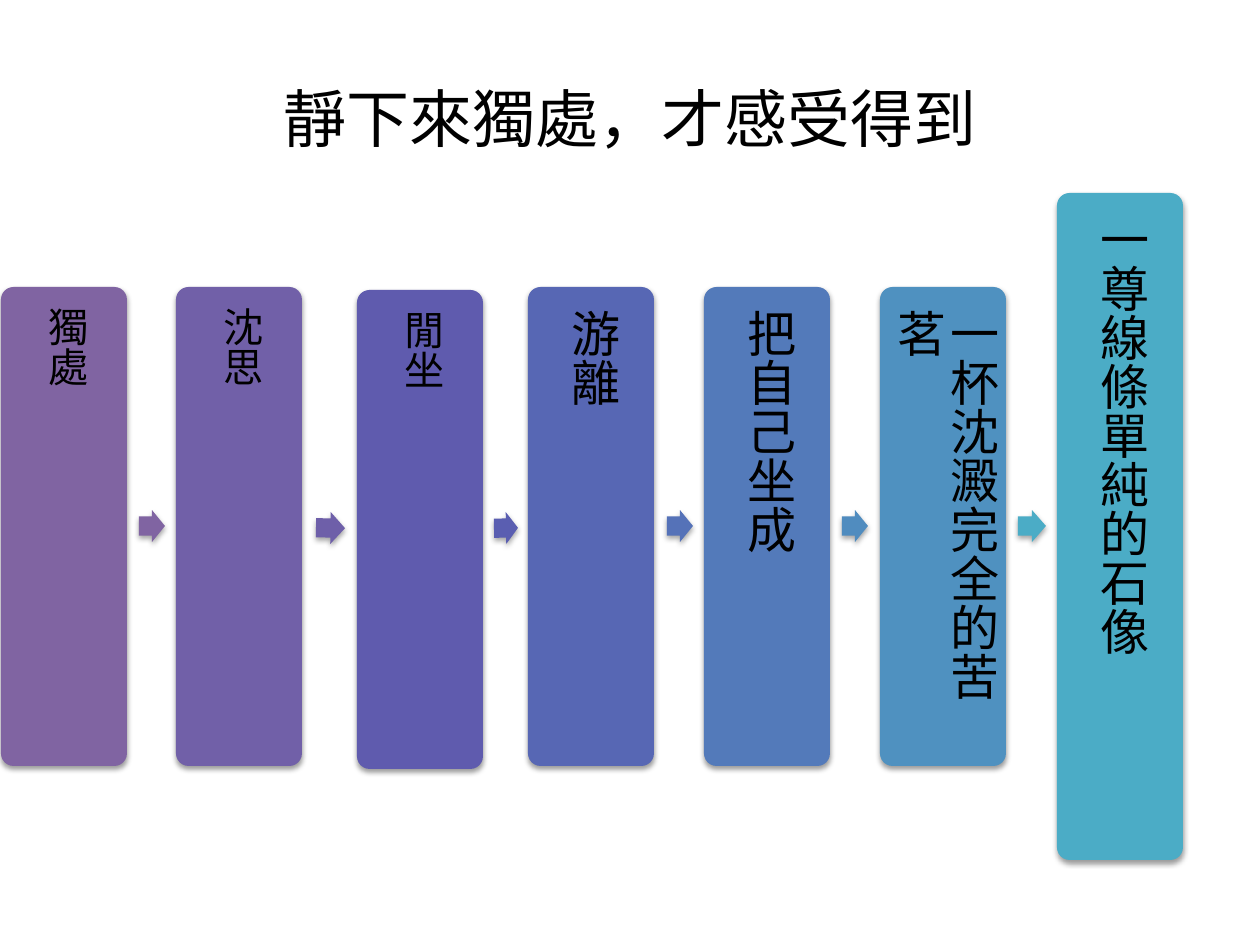
"""Build a slide showing a row of vertical cards joined by arrows."""
import pptx
import pptx.util
import pptx.dml.color
import pptx.enum.shapes
import pptx.enum.text
import pptx.oxml
import pptx.oxml.ns

SHAPE = pptx.enum.shapes.MSO_SHAPE
ALIGN = pptx.enum.text.PP_ALIGN
MIDDLE = pptx.enum.text.MSO_ANCHOR.MIDDLE
WIDE, TALL, HEAD = 126, 479, 32
CARDS = [
    ("獨處", 1, 287, TALL, 23, "8064A2"),
    ("沈思", 176, 287, TALL, 23, "7160A8"),
    ("閒坐", 357, 290, TALL, 23, "5F5BAE"),
    ("游離", 528, 287, TALL, 28, "5767B4"),
    ("把自己坐成", 704, 287, TALL, 28, "537ABA"),
    ("一杯沈澱完全的苦茗", 880, 287, TALL, 28, "4F91C0"),
    ("一尊線條單純的石像", 1057, 193, 667, 28, "4BACC6"),
]
ARROWS = [
    (139, 510, 26, 0, "8064A2"),
    (316, 512, 29, 0.9, "6E5FA9"),
    (494, 512, 24, 359, "5A5EB1"),
    (667, 510, 26, 0, "5572B8"),
    (842, 510, 26, 0, "508CBF"),
    (1018, 510, 28, 0, "4BACC6"),
]


def px(count):
    """Turn pixels into EMU."""
    return pptx.util.Emu(round(count * 914400 / 126))


def tint(code):
    """Turn a hex string into a colour."""
    return pptx.dml.color.RGBColor.from_string(code)


def style(para, font, size, align):
    """Set the font and alignment of a paragraph."""
    para.alignment = align
    para.font.name = font
    para.font.size = pptx.util.Pt(size)
    para.font.color.rgb = tint("000000")


def shade(shape, alpha, drop):
    """Give a shape a soft shadow below it."""
    shape.shadow.inherit = False
    glow = pptx.oxml.parse_xml(
        f'<a:outerShdw {pptx.oxml.ns.nsdecls("a")} blurRad="{pptx.util.Pt(3.1)}" '
        f'dist="{pptx.util.Pt(drop)}" dir="5400000" rotWithShape="0">'
        f'<a:srgbClr val="000000"><a:alpha val="{alpha * 1000}"/></a:srgbClr>'
        '</a:outerShdw>')
    shape._element.spPr.find(pptx.oxml.ns.qn("a:effectLst")).append(glow)


def block(slide, kind, box, fill, alpha, drop):
    """Add a filled shape without outline."""
    shape = slide.shapes.add_shape(kind, *map(px, box))
    shape.fill.solid()
    shape.fill.fore_color.rgb = tint(fill)
    shape.line.fill.background()
    shade(shape, alpha, drop)
    return shape


def card(slide, text, left, top, height, size, fill):
    """Add a rounded card with vertical text."""
    shape = block(slide, SHAPE.ROUNDED_RECTANGLE,
                  (left, top, WIDE, height), fill, 38, 1.6)
    shape.adjustments[0] = 0.1
    frame = shape.text_frame
    frame.word_wrap = True
    frame.vertical_anchor = MIDDLE
    inset = px(16 if size < 28 else 19)
    frame.margin_left = frame.margin_right = inset
    frame.margin_top = frame.margin_bottom = inset
    frame._txBody.bodyPr.set("vert", "eaVert")
    para = frame.paragraphs[0]
    para.text = text
    para.line_spacing = 0.9
    style(para, "Calibri", size, ALIGN.LEFT)


def arrow(slide, left, top, width, turn, fill):
    """Add a block arrow between two cards."""
    shape = block(slide, SHAPE.RIGHT_ARROW,
                  (left, top, width, HEAD), fill, 35, 1.8)
    shape.adjustments[0] = 0.6
    shape.adjustments[1] = 0.5
    shape.rotation = turn


def title(slide, text):
    """Place and format the title."""
    shape = slide.shapes.title
    shape.left, shape.top, shape.width, shape.height = map(
        px, (63, 38, 1134, 158))
    shape.text_frame.vertical_anchor = MIDDLE
    para = shape.text_frame.paragraphs[0]
    para.text = text
    style(para, "Noto Sans CJK SC", 36, ALIGN.CENTER)


def main():
    """Build and save the slide."""
    deck = pptx.Presentation()
    deck.slide_width, deck.slide_height = px(1260), px(945)
    slide = deck.slides.add_slide(deck.slide_layouts[5])
    title(slide, "靜下來獨處，才感受得到")
    for item in CARDS:
        card(slide, *item)
    for item in ARROWS:
        arrow(slide, *item)
    deck.save("out.pptx")


if __name__ == "__main__":
    main()
